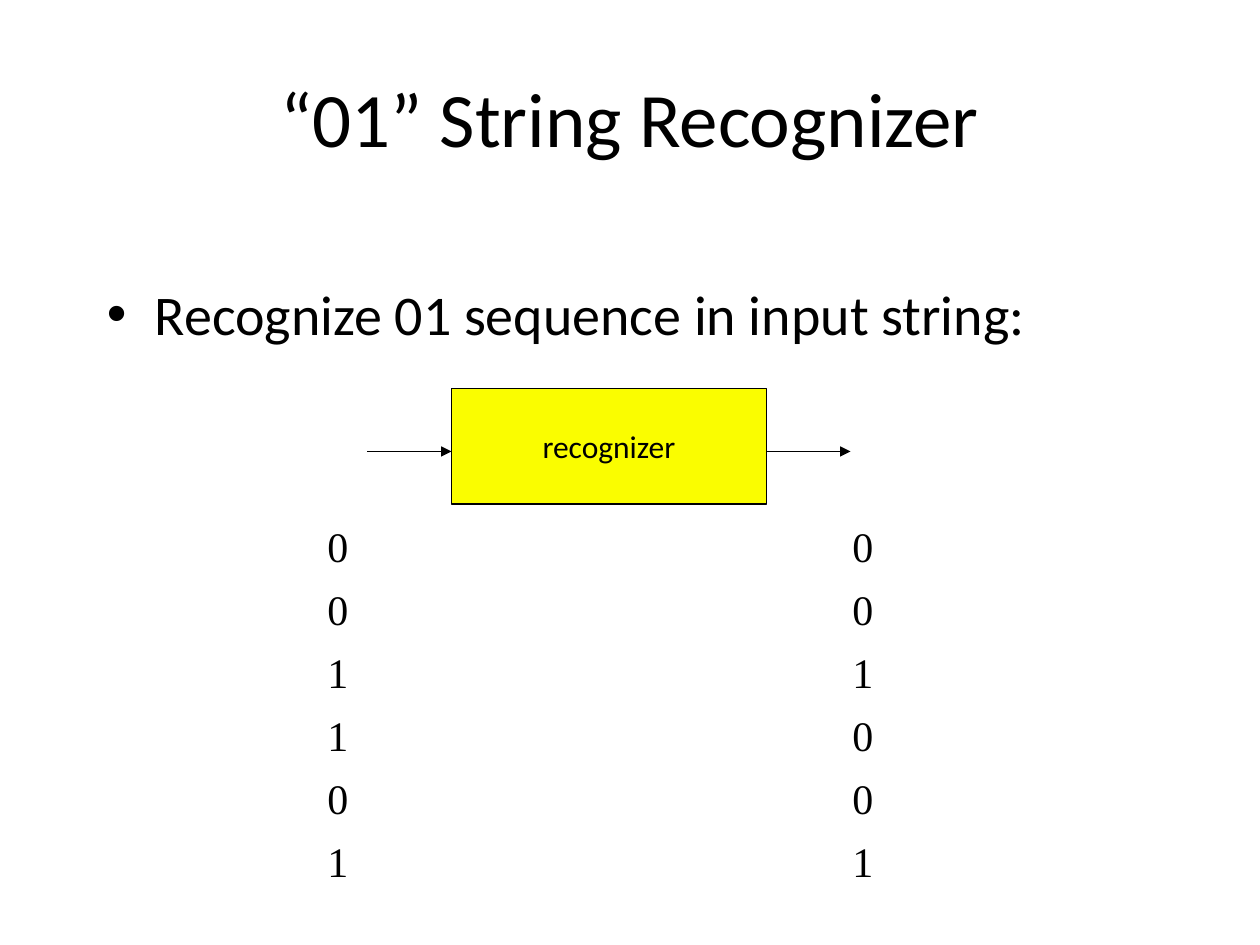
"""Build a slide that shows a recognizer of the string 01 with its input and output."""
from lxml import etree
from pptx import Presentation
from pptx.dml.color import RGBColor
from pptx.enum.shapes import MSO_CONNECTOR, MSO_SHAPE
from pptx.enum.text import MSO_ANCHOR, MSO_AUTO_SIZE, PP_ALIGN
from pptx.oxml.ns import qn
from pptx.util import Inches, Pt

LEFT, CENTER = PP_ALIGN.LEFT, PP_ALIGN.CENTER
TOP, MIDDLE = MSO_ANCHOR.TOP, MSO_ANCHOR.MIDDLE
FIT = MSO_AUTO_SIZE.SHAPE_TO_FIT_TEXT
COLORS = {name: RGBColor.from_string(value)
          for name, value in {"ink": "000000", "block": "FAFD00"}.items()}

deck = Presentation()
deck.slide_width, deck.slide_height = Inches(10), Inches(7.5)
page = deck.slides.add_slide(deck.slide_layouts[6])
UNIT = deck.slide_width // 120


def grid(*cells):
    return [round(cell * UNIT) for cell in cells]


def write(box, text, size, font="Calibri", align=LEFT, anchor=TOP, wrap=True):
    frame = box.text_frame
    frame.word_wrap = wrap
    frame.vertical_anchor = anchor
    para = frame.paragraphs[0]
    para.alignment = align
    span = para.add_run()
    span.text = text
    span.font.size = Pt(size)
    span.font.name = font
    span.font.color.rgb = COLORS["ink"]
    return para


title = page.shapes.add_textbox(*grid(6, 3.6, 108, 15))
write(title, "“01” String Recognizer", 44, align=CENTER, anchor=MIDDLE)

body = page.shapes.add_textbox(*grid(9, 26, 102, 9))
bullet = write(body, "Recognize 01 sequence in input string:", 32)
settings = bullet._p.get_or_add_pPr()
indent = Inches(0.38)
settings.set("marL", str(indent))
settings.set("indent", str(-indent))
etree.SubElement(settings, qn("a:buFont"), typeface="Arial")
etree.SubElement(settings, qn("a:buChar"), char="•")

block = page.shapes.add_shape(MSO_SHAPE.RECTANGLE, *grid(43, 37, 30, 11))
block.shadow.inherit = False
block.fill.solid()
block.fill.fore_color.rgb = COLORS["block"]
block.line.color.rgb = COLORS["ink"]
block.line.width = Pt(1)
write(block, "recognizer", 18, align=CENTER, anchor=MIDDLE, wrap=False)

for start, end in [(35, 43), (73, 81)]:
    arrow = page.shapes.add_connector(MSO_CONNECTOR.STRAIGHT, *grid(start, 43, end, 43))
    arrow.line.color.rgb = COLORS["ink"]
    arrow.line.width = Pt(1)
    etree.SubElement(arrow.line._get_or_add_ln(), qn("a:tailEnd"), type="triangle")
    etree.SubElement(arrow._element.spPr, qn("a:effectLst"))

for column, digits in [(30, "001101"), (80, "001001")]:
    for row, digit in enumerate(digits):
        box = page.shapes.add_textbox(*grid(column, 49 + 6 * row, 4.4, 6))
        write(box, digit, 24, font="Times New Roman", wrap=False)
        box.text_frame.auto_size = FIT

deck.save("out.pptx")
